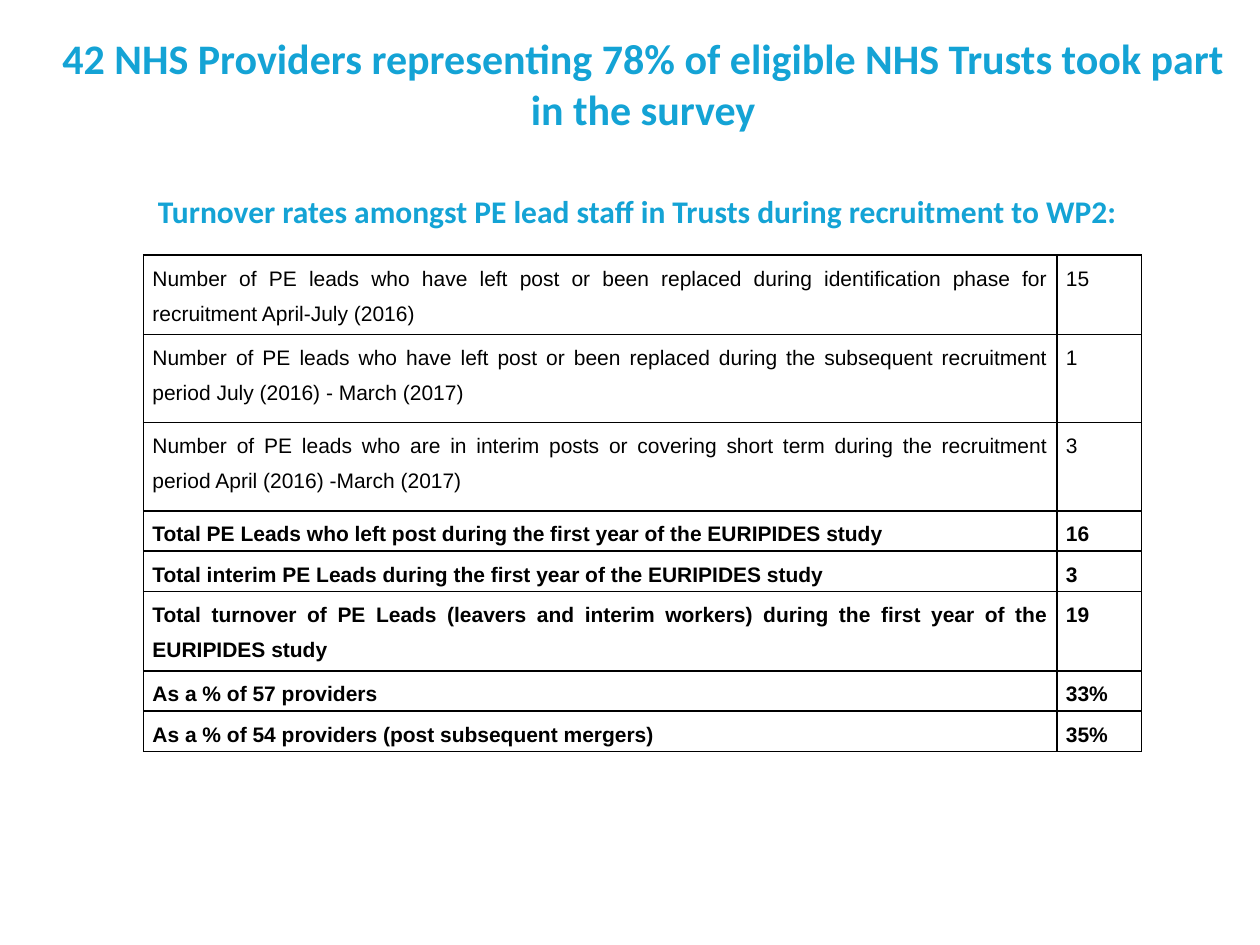
from lxml import etree
from pptx import Presentation
from pptx.dml.color import RGBColor
from pptx.enum.text import MSO_AUTO_SIZE, PP_ALIGN
from pptx.oxml.ns import qn
from pptx.util import Inches, Pt

WIDTH, HEIGHT = 10, 7.5

TURNOVER = [  # label, value, row height in inches, bold
    ("Number of PE leads who have left post or been replaced during "
     "identification phase for recruitment April-July (2016)", "15", 0.63, False),
    ("Number of PE leads who have left post or been replaced during the "
     "subsequent recruitment period July (2016) - March (2017)", "1", 0.7, False),
    ("Number of PE leads who are in interim posts or covering short term during "
     "the recruitment period April (2016) -March (2017)", "3", 0.7, False),
    ("Total PE Leads who left post during the first year of the EURIPIDES study",
     "16", 0.32, True),
    ("Total interim PE Leads during the first year of the EURIPIDES study",
     "3", 0.32, True),
    ("Total turnover of PE Leads (leavers and interim workers) during the first "
     "year of the EURIPIDES study", "19", 0.63, True),
    ("As a % of 57 providers", "33%", 0.32, True),
    ("As a % of 54 providers (post subsequent mergers)", "35%", 0.32, True),
]


def color(hex_string):
    return RGBColor.from_string(hex_string)


def x(share):
    return Inches(WIDTH * share)


def y(share):
    return Inches(HEIGHT * share)


class Deck:
    accent, ink = "14A3D5", "000000"
    heading_font, body_font = "Calibri", "Arial"

    def __init__(self):
        self.prs = Presentation()
        self.prs.slide_width, self.prs.slide_height = x(1), y(1)
        self.slide = self.prs.slides.add_slide(self.prs.slide_layouts[6])

    def set_text(self, tf, text, font, size, hex_string, bold, align):
        tf.text = text
        tf.word_wrap = True
        p = tf.paragraphs[0]
        p.alignment = align
        f = p.runs[0].font
        f.name, f.size, f.bold = font, Pt(size), bold
        f.color.rgb = color(hex_string)
        return p

    def heading(self, text, left, top, width, height, size):
        tf = self.slide.shapes.add_textbox(x(left), y(top), x(width), y(height)).text_frame
        self.set_text(tf, text, self.heading_font, size, self.accent, True,
                      PP_ALIGN.CENTER)
        tf.auto_size = MSO_AUTO_SIZE.SHAPE_TO_FIT_TEXT

    def table(self, rows, left, top, col_shares):
        height = sum(row[2] for row in rows)
        frame = self.slide.shapes.add_table(len(rows), len(col_shares), x(left), y(top),
                                            x(sum(col_shares)), Inches(height))
        table = frame.table
        table.first_row = table.horz_banding = False
        for col, share in zip(table.columns, col_shares):
            col.width = x(share)
        for row, (label, value, row_height, bold) in zip(table.rows, rows):
            row.height = Inches(row_height)
            for cell, text in zip(row.cells, (label, value)):
                self.cell(cell, text, bold)

    def cell(self, cell, text, bold):
        cell.margin_left = cell.margin_right = Inches(0.07)
        cell.margin_top = cell.margin_bottom = 0
        p = self.set_text(cell.text_frame, text, self.body_font, 12, self.ink, bold,
                          PP_ALIGN.JUSTIFY)
        p.line_spacing = 1.5
        self.borders(cell)
        cell.fill.background()

    def borders(self, cell):
        props = cell._tc.get_or_add_tcPr()
        for side in ("a:lnL", "a:lnR", "a:lnT", "a:lnB"):
            ln = etree.SubElement(props, qn(side), w=str(Pt(1)))
            fill = etree.SubElement(ln, qn("a:solidFill"))
            etree.SubElement(fill, qn("a:srgbClr"), val=self.ink)


def main():
    deck = Deck()
    deck.table(TURNOVER, 0.114, 0.27, (0.725, 0.067))
    deck.heading("42 NHS Providers representing 78% of eligible NHS Trusts took part "
                 "in the survey", 0.034, 0.028, 0.953, 0.12, 24)
    deck.heading("Turnover rates amongst PE lead staff in Trusts during recruitment "
                 "to WP2:", 0.114, 0.197, 0.784, 0.054, 18)
    deck.prs.save("out.pptx")


if __name__ == "__main__":
    main()
